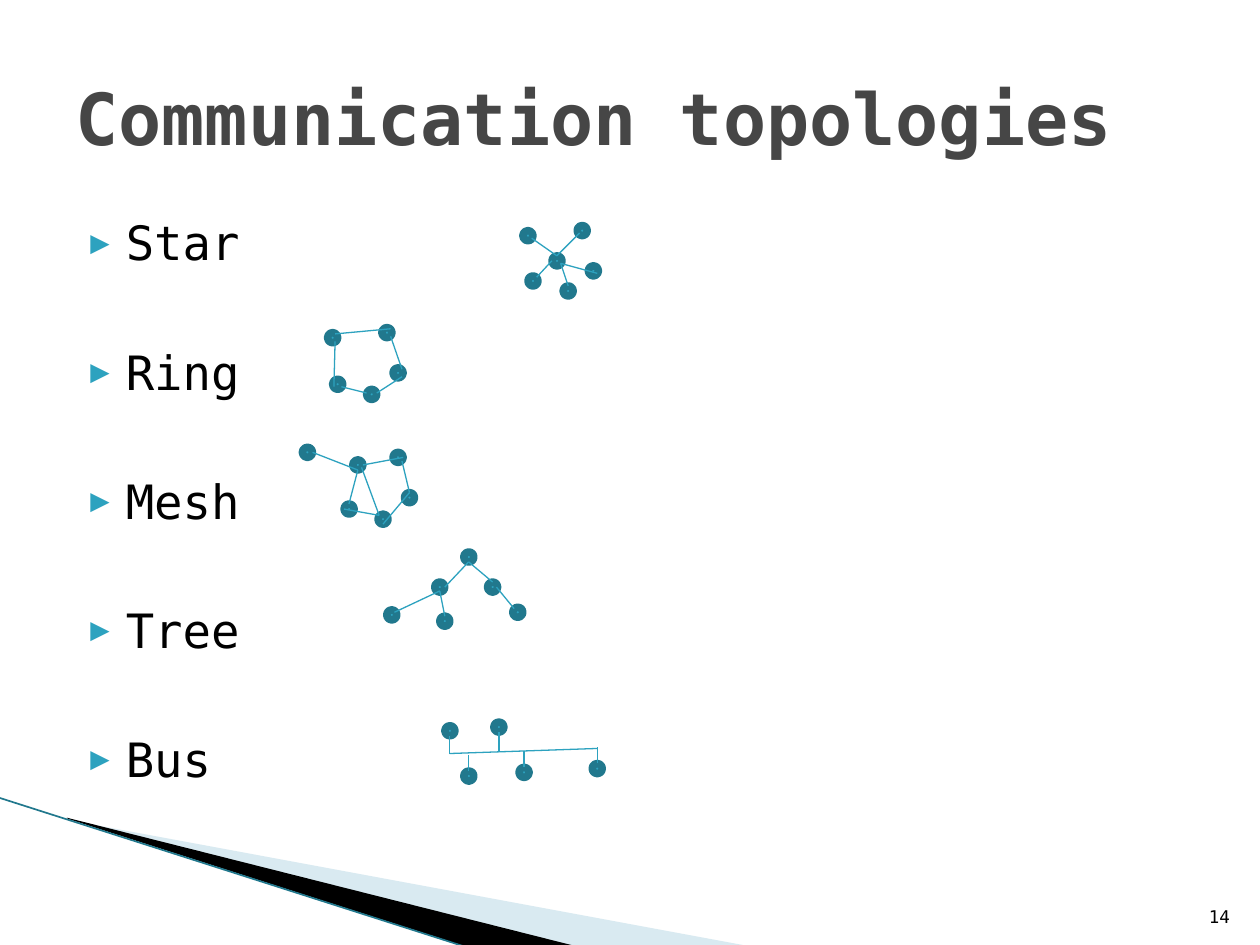
"""Build a slide on communication topologies with small network sketches."""
from lxml.etree import SubElement as Sub
from pptx import Presentation as Deck
from pptx.dml.color import RGBColor as Rgb
from pptx.enum.shapes import MSO_CONNECTOR as Conn, MSO_SHAPE as Geo
from pptx.enum.text import MSO_ANCHOR as Anchor, PP_ALIGN as Align
from pptx.oxml.ns import qn
from pptx.util import Pt

HUE = {"node": "2DA2BF", "rim": "21788D", "pale": "A0CBDC",
       "title": "464646", "ink": "000000"}
FACE = "DejaVu Sans Mono"
SIDE = 5.76
NETS = {
    "Star": {
        "dots": [(298.8, 131.8), (315.4, 146.2), (321.8, 163.4),
                 (329.8, 128.9), (301.7, 157.7), (336.2, 151.9)],
        "links": [(318.2, 146.2, 331.2, 133.2), (320.4, 150.5, 341.3, 156.2),
                  (320.4, 150.5, 324.7, 163.4), (315.4, 149, 306.7, 158.4),
                  (318.2, 146.2, 303.8, 136.1)]},
    "Ring": {
        "dots": [(187.2, 190.1), (209.5, 222.5), (218.2, 187.2),
                 (190.1, 216.7), (224.6, 210.2)],
        "links": [(191.5, 190.8, 223.2, 187.9), (223.2, 192.2, 229.7, 211),
                  (229.7, 215.3, 215.3, 224.6), (209.5, 224.6, 195.1, 221),
                  (190.8, 221, 191.5, 195.1)]},
    "Mesh": {
        "dots": [(172.8, 255.6), (216, 293.8), (224.6, 258.5),
                 (196.6, 288), (231.1, 281.5), (201.6, 262.8)],
        "links": [(204.5, 268.6, 178.6, 258.5), (206.6, 267.1, 216.7, 294.5),
                  (207.4, 265.7, 230.4, 261.4), (229.7, 263.5, 234, 281.5),
                  (234, 281.5, 218.9, 299.5), (216.7, 294.5, 196.6, 290.9),
                  (199.4, 288, 204.5, 268.6)]},
    "Tree": {
        "dots": [(221, 348.5), (248.4, 332.6), (251.3, 352.1),
                 (293, 347), (265, 315.4), (278.6, 332.6)],
        "links": [(267.8, 321.1, 254.2, 335.5), (251.3, 337.7, 254.2, 352.1),
                  (251.3, 337.7, 225.4, 349.9), (267.8, 321.1, 281.5, 332.6),
                  (283.7, 335.5, 293.8, 347.8)]},
    "Bus": {
        "dots": [(254.2, 414.7), (296.6, 438.5), (265, 440.6),
                 (338.4, 436.3), (282.2, 412.6)],
        "links": [(257, 430.6, 341.3, 427.7), (257, 430.6, 257, 420.5),
                  (299.5, 438.5, 299.5, 429.1), (267.8, 440.6, 267.8, 431.3),
                  (341.3, 436.3, 341.3, 427), (285.1, 429.1, 285.1, 418.3)]},
}
WEDGES = {
    "pale": [(39.6, 468.7), (428.4, 540.7), (328.3, 540.7), (39.6, 468)],
    "ink": [(38.2, 467.3), (329, 540.7), (267.8, 541.4), (38.9, 468)],
}

deck = Deck()
deck.slide_width, deck.slide_height = Pt(720), Pt(540)
slide = deck.slides.add_slide(deck.slide_layouts[6])
shapes = slide.shapes


def link(ends, hue, width):
    line = shapes.add_connector(Conn.STRAIGHT, *map(Pt, ends))
    line.line.color.rgb = Rgb.from_string(HUE[hue])
    line.line.width = Pt(width)
    Sub(line._element.spPr, qn("a:effectLst"))


def write(area, lines, size, hue, frame, para, bold=False, bullet=False):
    text = shapes.add_textbox(*map(Pt, area)).text_frame
    text.word_wrap = True
    for key, val in frame.items():
        setattr(text, key, val)
    for row, line in enumerate(lines):
        part = text.add_paragraph() if row else text.paragraphs[0]
        part.text = line
        for key, val in para.items():
            if row or key != "space_before":
                setattr(part, key, val)
        if bullet:
            props = part._p.get_or_add_pPr()
            props.set("marL", str(Pt(28.8)))
            props.set("indent", str(Pt(-20.16)))
            tint = Sub(props, qn("a:buClr"))
            Sub(tint, qn("a:srgbClr"), val=HUE["node"])
            Sub(props, qn("a:buSzPct"), val="68000")
            Sub(props, qn("a:buFont"), typeface=FACE)
            Sub(props, qn("a:buChar"), char="▶")
        font = part.runs[0].font
        for key, val in {"name": FACE, "size": Pt(size), "bold": bold}.items():
            setattr(font, key, val)
        font.color.rgb = Rgb.from_string(HUE[hue])


for hue, spots in WEDGES.items():
    first, *rest = [(Pt(x), Pt(y)) for x, y in spots]
    pen = shapes.build_freeform(*first)
    pen.add_line_segments(rest)
    wedge = pen.convert_to_shape()
    wedge.shadow.inherit = False
    wedge.fill.solid()
    wedge.fill.fore_color.rgb = Rgb.from_string(HUE[hue])
    wedge.line.fill.background()
    if hue == "pale":
        tint = wedge._element.spPr.find(qn("a:solidFill"))[0]
        Sub(tint, qn("a:alpha"), val="40000")
link((-0.7, 455.8, 267.1, 541.4), "rim", 0.95)

write((36, 116.6, 648, 368.6), NETS, 27, "ink", {"margin_top": Pt(5.5)},
      {"space_before": Pt(41.4)}, bullet=True)
write((36, 21.6, 648, 90), ["Communication topologies"], 41, "title",
      {"vertical_anchor": Anchor.MIDDLE}, {}, bold=True)

for net in NETS.values():
    for x, y in net["dots"]:
        dot = shapes.add_shape(Geo.OVAL, Pt(x), Pt(y), Pt(SIDE), Pt(SIDE))
        dot.shadow.inherit = False
        dot.fill.solid()
        dot.fill.fore_color.rgb = Rgb.from_string(HUE["node"])
        dot.line.color.rgb = Rgb.from_string(HUE["rim"])
        dot.line.width = Pt(4.33)
    for ends in net["links"]:
        link(ends, "node", 0.75)

write((681.1, 504.7, 28.8, 28.8), ["14"], 10, "ink",
      {"vertical_anchor": Anchor.BOTTOM}, {"alignment": Align.RIGHT})

deck.save("out.pptx")
